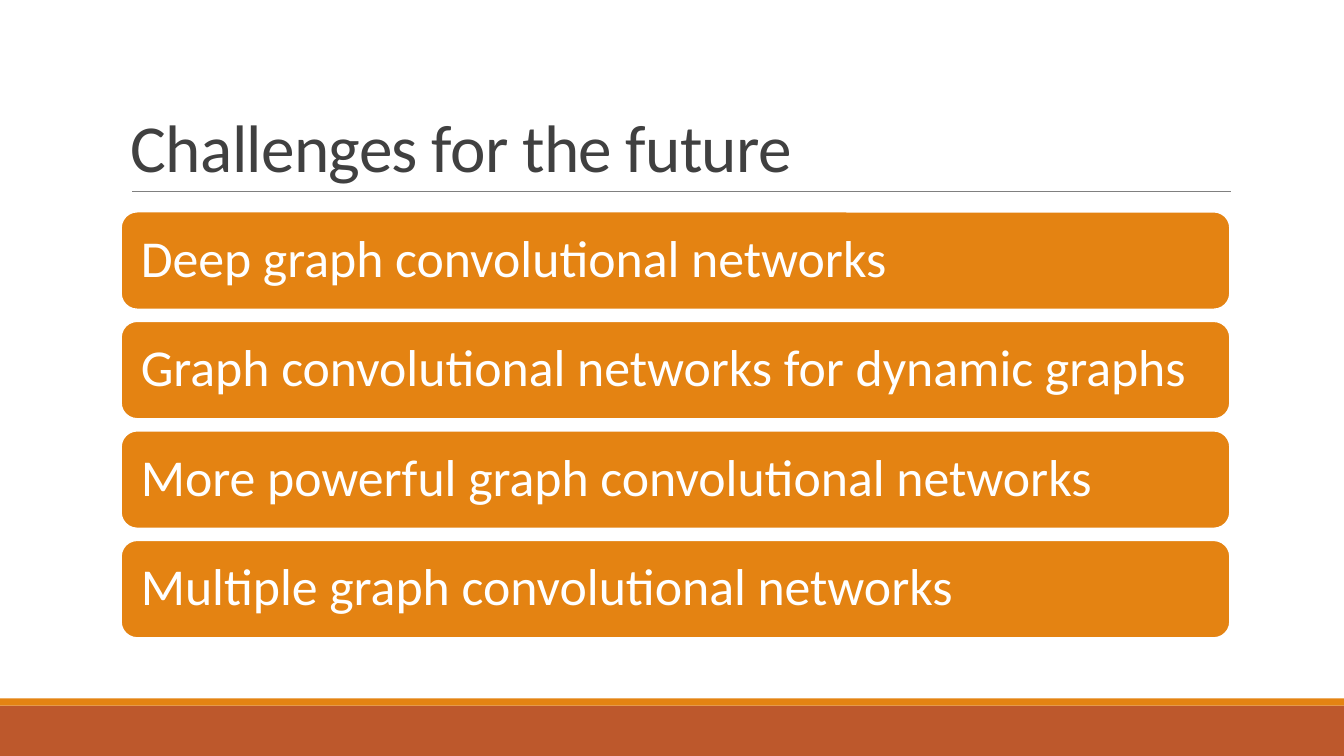
from lxml import etree
from pptx import Presentation
from pptx.dml.color import RGBColor
from pptx.enum.shapes import MSO_CONNECTOR, MSO_SHAPE
from pptx.enum.text import MSO_ANCHOR, PP_ALIGN
from pptx.oxml.ns import qn
from pptx.util import Pt

RECTANGLE = MSO_SHAPE.RECTANGLE
ROUNDED = MSO_SHAPE.ROUNDED_RECTANGLE
STRAIGHT = MSO_CONNECTOR.STRAIGHT
LEFT = PP_ALIGN.LEFT
BOTTOM, MIDDLE = MSO_ANCHOR.BOTTOM, MSO_ANCHOR.MIDDLE

TITLE = "Challenges for the future"
CHALLENGES = [
    "Deep graph convolutional networks",
    "Graph convolutional networks for dynamic graphs",
    "More powerful graph convolutional networks",
    "Multiple graph convolutional networks",
]

ORANGE, RUST, WHITE = "E48312", "BD582C", "FFFFFF"
DARK_GREY, RULE_GREY = "404040", "808080"
FONT = "Calibri"

# Lengths in px, 100 to the inch
EMU_PER_PX = 9144
PAGE_WIDTH, PAGE_HEIGHT = 1333, 750
FOOTER_BANDS = [(700, 50, RUST), (693, 7, ORANGE)]  # top, height, colour
TITLE_BOX = (120, 31, 1100, 159)
RULE_LEFT, RULE_RIGHT, RULE_TOP = 131, 1221, 190
BAR_LEFT, BAR_WIDTH, BAR_HEIGHT = 120, 1100, 97
FIRST_BAR_TOP, LAST_BAR_TOP = 210, 536
BAR_MARGIN = 15


def px(length):
    return round(length * EMU_PER_PX)


def color(hex_string):
    return RGBColor.from_string(hex_string)


def add_block(page, preset, bounds, fill, outline=None):
    block = page.shapes.add_shape(preset, *map(px, bounds))
    block.shadow.inherit = False
    block.fill.solid()
    block.fill.fore_color.rgb = color(fill)
    if outline:
        block.line.color.rgb = color(outline)
        block.line.width = Pt(1.25)
    else:
        block.line.fill.background()
    return block


def write_text(box, text, size, ink, anchor, line_spacing):
    frame = box.text_frame
    frame.word_wrap = True
    frame.vertical_anchor = anchor
    para = frame.paragraphs[0]
    para.alignment = LEFT
    para.line_spacing = line_spacing
    span = para.add_run()
    span.text = text
    for name, value in {"name": FONT, "size": Pt(size)}.items():
        setattr(span.font, name, value)
    span.font.color.rgb = color(ink)
    return span


def add_title(page):
    box = page.shapes.add_textbox(*map(px, TITLE_BOX))
    span = write_text(box, TITLE, 48, DARK_GREY, BOTTOM, 0.85)
    span.font._element.set("spc", "-50")


def add_rule(page):
    rule = page.shapes.add_connector(
        STRAIGHT, px(RULE_LEFT), px(RULE_TOP), px(RULE_RIGHT), px(RULE_TOP))
    rule.line.color.rgb = color(RULE_GREY)
    rule.line.width = Pt(0.5)
    etree.SubElement(rule._element.spPr, qn("a:effectLst"))


def add_challenges(page):
    step = (LAST_BAR_TOP - FIRST_BAR_TOP) / (len(CHALLENGES) - 1)
    for index, challenge in enumerate(CHALLENGES):
        top = FIRST_BAR_TOP + index * step
        bar = add_block(page, ROUNDED, (BAR_LEFT, top, BAR_WIDTH, BAR_HEIGHT),
                        ORANGE, WHITE)
        for side in ("left", "top", "right", "bottom"):
            setattr(bar.text_frame, f"margin_{side}", px(BAR_MARGIN))
        write_text(bar, challenge, 37, WHITE, MIDDLE, 0.9)


def main():
    deck = Presentation()
    deck.slide_width, deck.slide_height = px(PAGE_WIDTH), px(PAGE_HEIGHT)
    page = deck.slides.add_slide(deck.slide_layouts[6])
    for top, height, fill in FOOTER_BANDS:
        add_block(page, RECTANGLE, (0, top, PAGE_WIDTH, height), fill)
    add_rule(page)
    add_title(page)
    add_challenges(page)
    deck.save("out.pptx")


if __name__ == "__main__":
    main()
